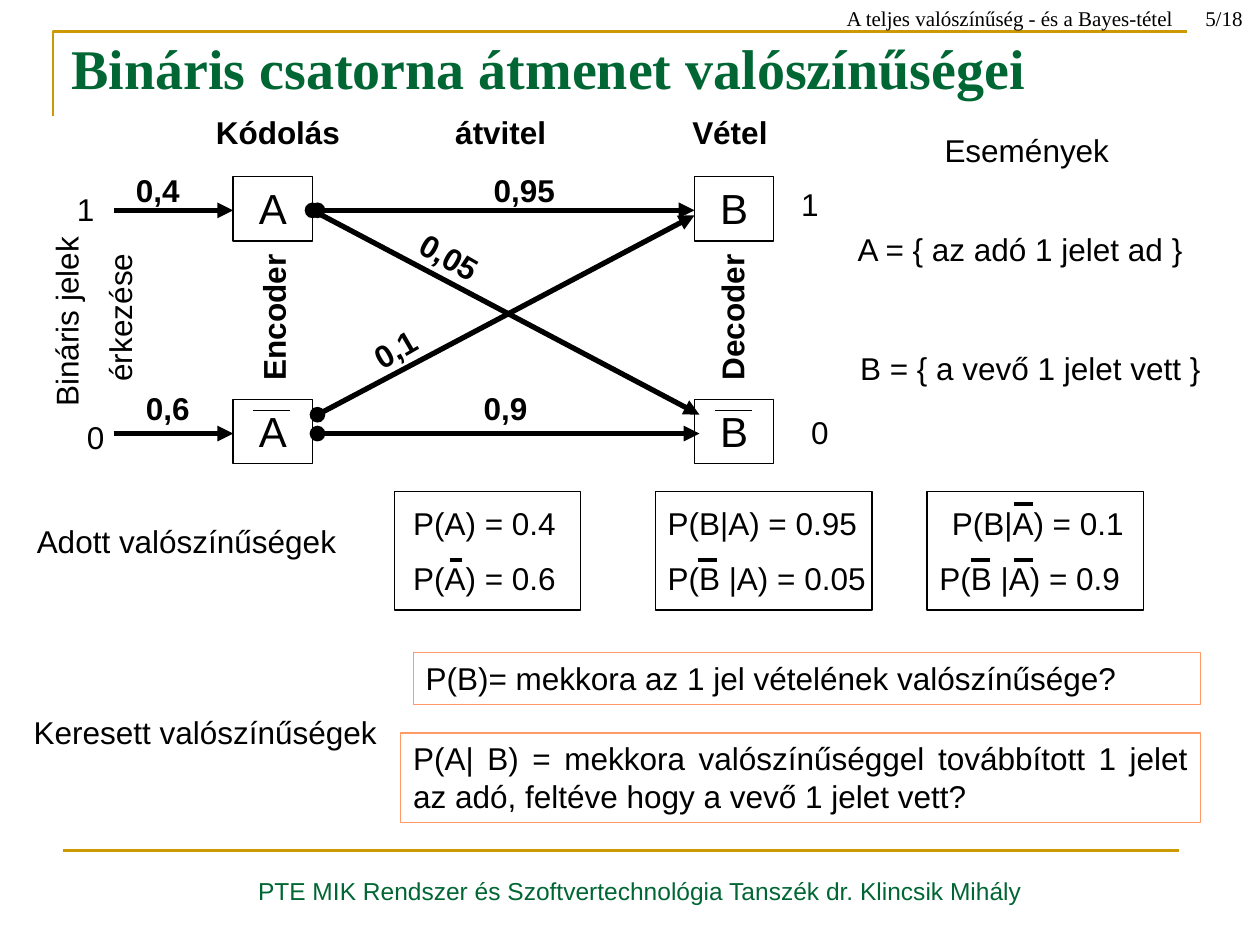
from dataclasses import dataclass

from lxml.etree import SubElement
from pptx import Presentation
from pptx.dml.color import RGBColor
from pptx.enum.shapes import MSO_CONNECTOR, MSO_SHAPE
from pptx.enum.text import MSO_ANCHOR, PP_ALIGN
from pptx.oxml.ns import qn
from pptx.util import Cm, Pt


@dataclass(frozen=True)
class Theme:
    black: RGBColor = RGBColor(0, 0, 0)
    green: RGBColor = RGBColor(0x00, 0x66, 0x33)
    gold: RGBColor = RGBColor(0xCC, 0x99, 0x00)
    orange: RGBColor = RGBColor(0xFF, 0x99, 0x66)
    sans: str = "Arial"
    serif: str = "Times New Roman"
    title: int = 32
    node: int = 24
    body: int = 18
    footer: int = 14
    header: int = 12


THEME = Theme()
LINE_HEIGHT = 1.02


def write(shape, text, size=THEME.body, color=THEME.black, font=THEME.sans,
          bold=False, align=PP_ALIGN.LEFT, anchor=MSO_ANCHOR.TOP):
    frame = shape.text_frame
    frame.word_wrap = True
    frame.vertical_anchor = anchor
    for index, line in enumerate(text.split("\n")):
        para = frame.add_paragraph() if index else frame.paragraphs[0]
        para.alignment = align
        if index:
            para.space_before = Pt(size / 2)
        span = para.add_run()
        span.text = line
        span.font.size = Pt(size)
        span.font.name = font
        span.font.bold = bold
        span.font.color.rgb = color


def add_label(shapes, text, left, top, width, height=LINE_HEIGHT, rotation=0, **style):
    box = shapes.add_textbox(Cm(left), Cm(top), Cm(width), Cm(height))
    box.rotation = rotation
    write(box, text, **style)


def add_frame(shapes, left, top, width, height, color=THEME.black):
    box = shapes.add_shape(MSO_SHAPE.RECTANGLE, Cm(left), Cm(top), Cm(width), Cm(height))
    box.shadow.inherit = False
    box.fill.background()
    box.line.color.rgb = color
    box.line.width = Pt(0.75)
    return box


def add_line(shapes, start, end, width, color=THEME.black, head=None, tail=None):
    line = shapes.add_connector(MSO_CONNECTOR.STRAIGHT, *map(Cm, start + end))
    line.line.color.rgb = color
    line.line.width = Pt(width)
    outline = line.line._get_or_add_ln()
    for tag, kind in (("a:headEnd", head), ("a:tailEnd", tail)):
        if kind:
            SubElement(outline, qn(tag), type=kind)
    SubElement(line._element.spPr, qn("a:effectLst"))


def add_page_furniture(page):
    builder = page.shapes.build_freeform(Cm(1.07), Cm(2.33))
    builder.add_line_segments([(Cm(1.07), Cm(0.63)), (Cm(23.92), Cm(0.63))], close=False)
    corner = builder.convert_to_shape()
    corner.shadow.inherit = False
    corner.fill.background()
    corner.line.color.rgb = THEME.gold
    corner.line.width = Pt(1.5)
    add_line(page.shapes, (1.27, 17.14), (23.77, 17.14), 1.5, THEME.gold)

    title = page.shapes.title
    title.left, title.top, title.width, title.height = Cm(1.19), Cm(0.66), Cm(22.38), Cm(1.5)
    frame = title.text_frame
    frame.margin_left = frame.margin_right = Cm(0.25)
    frame.margin_top, frame.margin_bottom = Cm(0.03), Cm(0.13)
    write(title, "Bináris csatorna átmenet valószínűségei", THEME.title, THEME.green,
          THEME.serif, True, anchor=MSO_ANCHOR.BOTTOM)

    add_label(page.shapes, "PTE MIK Rendszer és Szoftvertechnológia Tanszék dr. Klincsik Mihály",
              2.11, 17.53, 21.59, size=THEME.footer, color=THEME.green, align=PP_ALIGN.CENTER)
    for text, left, width in (("A teljes valószínűség - és a Bayes-tétel", 15.4, 8.5),
                              ("5/18", 23.3, 2)):
        add_label(page.shapes, text, left, 0, width, 0.74, size=THEME.header, font=THEME.serif,
                  align=PP_ALIGN.RIGHT, anchor=MSO_ANCHOR.BOTTOM)


def add_channel(page):
    shapes = page.shapes
    for letter, left in (("A", 4.7), ("B", 14)):
        for top in (3.56, 8.05):
            node = add_frame(shapes, left, top, 1.6, 1.3)
            write(node, letter, THEME.node, align=PP_ALIGN.CENTER)
        add_line(shapes, (left + 0.41, 8.27), (left + 1.15, 8.27), 0.75)

    for start, end in (((6.3, 4.24), (14.1, 8.36)), ((6.4, 8.36), (14, 4.34)),
                       ((6.4, 8.74), (14.1, 8.74)), ((6.4, 4.24), (14, 4.24))):
        add_line(shapes, start, end, 3, head="oval", tail="triangle")
    for height in (4.24, 8.74):
        add_line(shapes, (2.29, height), (4.7, height), 3, tail="triangle")

    for text, left, top, rotation in (("0,4", 2.49, 3.33, 0), ("0,6", 2.69, 7.72, 0),
                                      ("0,95", 9.7, 3.33, 0), ("0,9", 9.5, 7.72, 0),
                                      ("0,05", 8.18, 4.7, 30), ("0,1", 7.24, 6.4, 330)):
        add_label(shapes, text, left, top, 1.88, rotation=rotation, bold=True)
    for text, left in (("Kódolás", 3.51), ("átvitel", 8), ("Vétel", 12.62)):
        add_label(shapes, text, left, 2.16, 4.19, bold=True, align=PP_ALIGN.CENTER)
    for text, left in (("Encoder", 3.76), ("Decoder", 13)):
        add_label(shapes, text, left, 5.89, 3.51, rotation=270, bold=True,
                  align=PP_ALIGN.CENTER)
    add_label(shapes, "Bináris jelek\n érkezése", -0.99, 5.41, 5.79, 2.16, rotation=270,
              align=PP_ALIGN.CENTER)
    for text, left, top in (("1", 1.3, 3.71), ("0", 1.5, 8.31),
                            ("1", 15.9, 3.61), ("0", 16.1, 8.2)):
        add_label(shapes, text, left, top, 0.89)


def add_events(page):
    add_label(page.shapes, "Események", 16.89, 2.51, 7.62, align=PP_ALIGN.CENTER)
    add_label(page.shapes, "A = { az adó 1 jelet ad }", 17.04, 4.52, 7.4)
    add_label(page.shapes, "B = { a vevő 1 jelet vett }", 17.09, 6.91, 7.6)


def add_given_card(page, left, width, rows, bars):
    shapes = page.shapes.add_group_shape().shapes
    for (text, indent), top in zip(rows, (10.03, 11.15)):
        add_label(shapes, text, left + indent, top, width + 0.2)
    for start, height, length in bars:
        add_line(shapes, (left + start, height), (left + start + length, height), 2.25)
    add_frame(shapes, left, 9.91, width, 2.39)


def add_probabilities(page):
    upper, lower = 10.16, 11.28
    add_given_card(page, 7.95, 3.76, (("P(A) = 0.4", 0.13), ("P(A) = 0.6", 0.13)),
                   ((1.12, lower, 0.25),))
    add_given_card(page, 13.21, 4.37, (("P(B|A) = 0.95", 0), ("P(B |A) = 0.05", 0)),
                   ((0.86, lower, 0.38),))
    add_given_card(page, 18.69, 4.37, (("P(B|A) = 0.1", 0.25), ("P(B |A) = 0.9", 0)),
                   ((0.89, lower, 0.38), (1.76, lower, 0.38), (1.76, upper, 0.38)))

    for text, left, top in (("Adott valószínűségek", -0.05, 10.39),
                            ("Keresett valószínűségek", 0.33, 14.25)):
        add_label(page.shapes, text, left, top, 7.62, align=PP_ALIGN.CENTER)

    questions = (
        ("P(B)= mekkora az 1 jel vételének valószínűsége?", 8.33, 13.16, 1.04, PP_ALIGN.LEFT),
        ("P(A| B) = mekkora valószínűséggel továbbított 1 jelet az adó, "
         "feltéve hogy a vevő 1 jelet vett?", 8.08, 14.78, 1.8, PP_ALIGN.JUSTIFY),
    )
    for text, left, top, height, align in questions:
        box = add_frame(page.shapes, left, top, 24.2 - left, height, THEME.orange)
        write(box, text, align=align)


def main():
    deck = Presentation()
    deck.slide_width, deck.slide_height = Cm(25.4), Cm(19.05)
    page = deck.slides.add_slide(deck.slide_layouts[5])
    add_page_furniture(page)
    add_channel(page)
    add_events(page)
    add_probabilities(page)
    deck.save("out.pptx")


if __name__ == "__main__":
    main()
